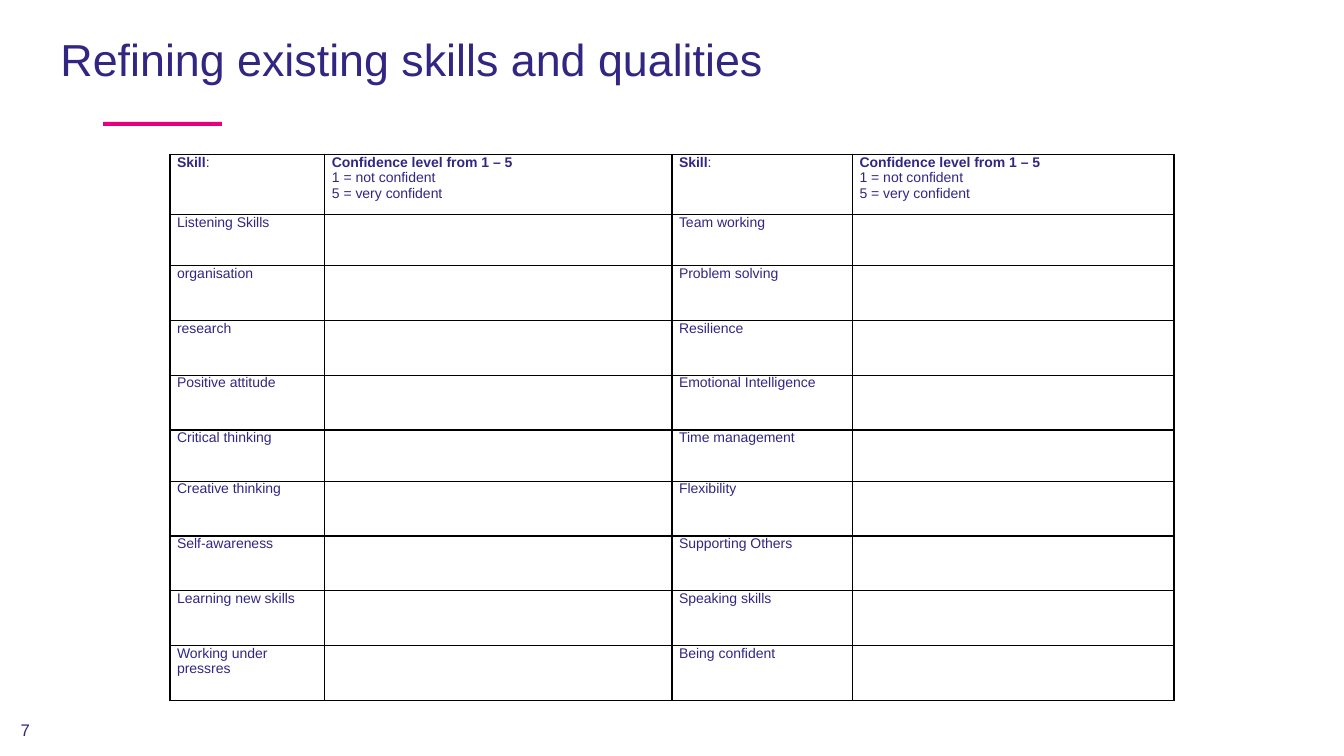
from dataclasses import dataclass

from lxml import etree
from pptx import Presentation
from pptx.dml.color import RGBColor
from pptx.enum import shapes, text
from pptx.oxml import ns
from pptx.util import Pt

TITLE = "Refining existing skills and qualities"
PAGE_NUMBER = "7"
SKILL_HEADING = [[("Skill", True), (":", False)]]
CONFIDENCE_HEADING = [
    [("Confidence level from 1 – 5", True)],
    [("1 = not confident", False)],
    [("5 = very confident", False)],
]
SKILL_PAIRS = [
    ("Listening Skills", "Team working"),
    ("organisation", "Problem solving"),
    ("research", "Resilience"),
    ("Positive attitude", "Emotional Intelligence"),
    ("Critical thinking", "Time management"),
    ("Creative thinking", "Flexibility"),
    ("Self-awareness", "Supporting Others"),
    ("Learning new skills", "Speaking skills"),
    ("Working under pressres", "Being confident"),
]
COLUMN_WIDTHS = [110.6, 248, 129, 229.6]
HEADER_HEIGHT, ROW_HEIGHT, SHORT_HEIGHT = 43, 39.1, 36.6
SHORT_ROWS = {1, 5}


@dataclass(frozen=True)
class Theme:
    font: str = "Arial"
    ink: str = "312783"
    accent: str = "E6007E"
    border: str = "000000"
    title_size: int = 32
    number_size: int = 12
    table_size: int = 10
    border_width: int = 1


THEME = Theme()


def apply(target, values):
    for name, value in values.items():
        setattr(target, name, value)


def place(left, top, width, height):
    return [Pt(value) for value in (left, top, width, height)]


def write(frame, lines, size, paragraph_format=None):
    for index, line in enumerate(lines):
        para = frame.add_paragraph() if index else frame.paragraphs[0]
        apply(para, paragraph_format or {})
        for content, bold in line:
            span = para.add_run()
            span.text = content
            apply(span.font, {"name": THEME.font, "size": Pt(size), "bold": bold})
            span.font.color.rgb = RGBColor.from_string(THEME.ink)


def outline(cell):
    properties = cell._tc.get_or_add_tcPr()
    for index, side in enumerate(("lnL", "lnR", "lnT", "lnB")):
        line = etree.Element(ns.qn(f"a:{side}"), w=str(Pt(THEME.border_width)))
        fill = etree.SubElement(line, ns.qn("a:solidFill"))
        etree.SubElement(fill, ns.qn("a:srgbClr"), val=THEME.border)
        properties.insert(index, line)


def add_heading(page):
    title = page.shapes.title
    apply(title, dict(zip(("left", "top", "width", "height"), place(36, 14.4, 832.3, 51.1))))
    apply(title.text_frame, {
        "vertical_anchor": text.MSO_ANCHOR.BOTTOM,
        "auto_size": text.MSO_AUTO_SIZE.NONE,
        "word_wrap": True,
    })
    write(title.text_frame, [[(TITLE, False)]], THEME.title_size,
          {"alignment": text.PP_ALIGN.LEFT, "line_spacing": 0.9})
    rule = page.shapes.add_shape(shapes.MSO_SHAPE.RECTANGLE, *place(73.6, 87, 85, 3))
    rule.shadow.inherit = False
    rule.fill.solid()
    rule.fill.fore_color.rgb = RGBColor.from_string(THEME.accent)
    rule.line.fill.background()


def add_page_number(page):
    box = page.shapes.add_textbox(*place(0, 508.5, 36, 25.2))
    apply(box.text_frame, {"word_wrap": True, "vertical_anchor": text.MSO_ANCHOR.MIDDLE})
    write(box.text_frame, [[(PAGE_NUMBER, False)]], THEME.number_size,
          {"alignment": text.PP_ALIGN.CENTER})


def add_skills_table(page):
    rows = [[SKILL_HEADING, CONFIDENCE_HEADING] * 2]
    for left, right in SKILL_PAIRS:
        rows.append([[[(left, False)]], [], [[(right, False)]], []])
    heights = [HEADER_HEIGHT] + [
        SHORT_HEIGHT if row in SHORT_ROWS else ROW_HEIGHT for row in range(1, len(rows))
    ]
    frame = page.shapes.add_table(len(rows), len(COLUMN_WIDTHS),
                                  *place(121.5, 110.3, sum(COLUMN_WIDTHS), sum(heights)))
    table = frame.table
    apply(table, {"first_row": False, "horz_banding": False})
    for column, width in zip(table.columns, COLUMN_WIDTHS):
        column.width = Pt(width)
    for row, height, contents in zip(table.rows, heights, rows):
        row.height = Pt(height)
        for cell, lines in zip(row.cells, contents):
            apply(cell, {"margin_left": Pt(5), "margin_right": Pt(5),
                         "margin_top": 0, "margin_bottom": 0})
            cell.fill.background()
            outline(cell)
            write(cell.text_frame, lines, THEME.table_size)


def main():
    deck = Presentation()
    apply(deck, {"slide_width": Pt(960), "slide_height": Pt(540)})
    page = deck.slides.add_slide(deck.slide_layouts.get_by_name("Title Only"))
    add_heading(page)
    add_page_number(page)
    add_skills_table(page)
    deck.save("out.pptx")


if __name__ == "__main__":
    main()
